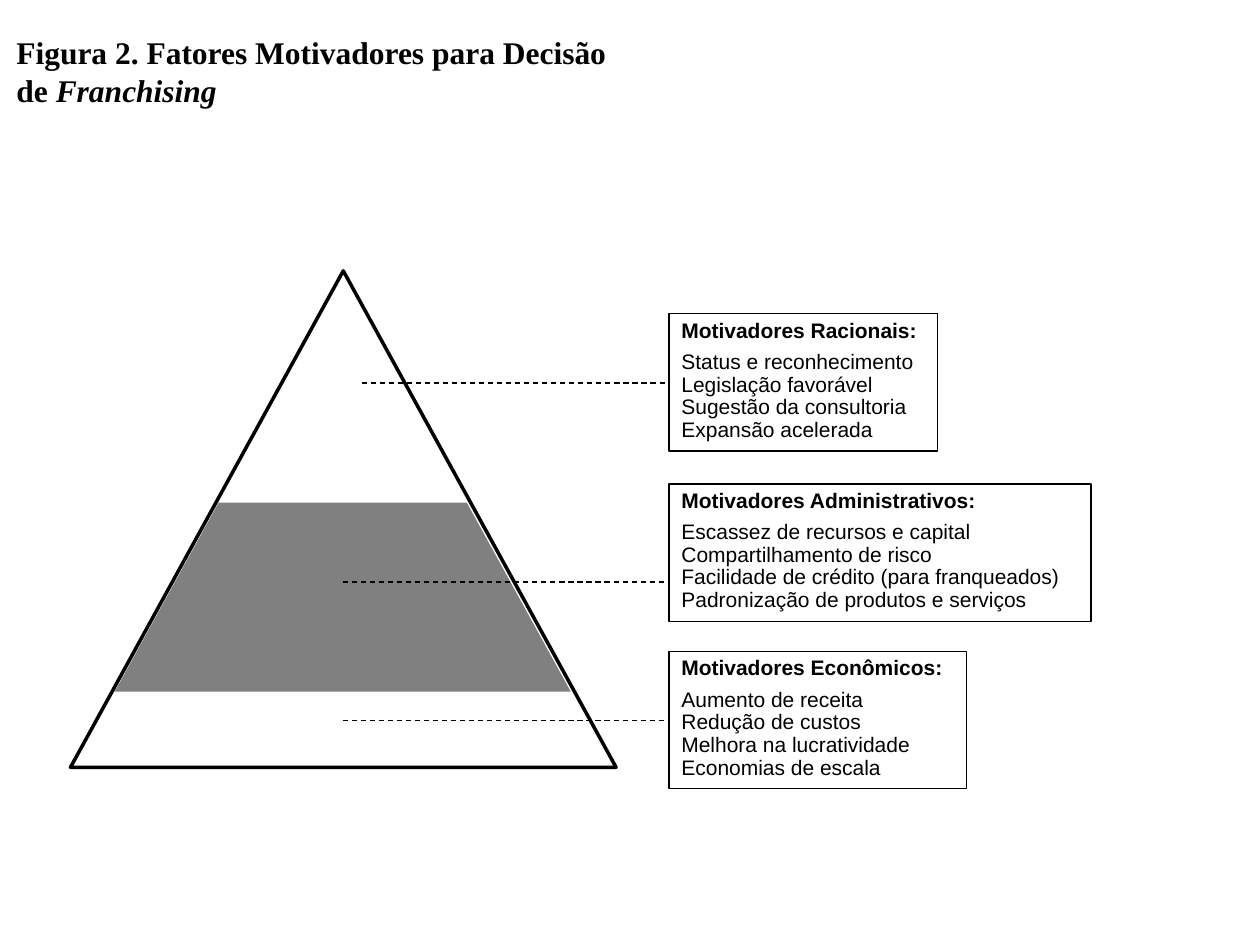
import dataclasses

import lxml.etree
import pptx
import pptx.dml.color
import pptx.enum.dml
import pptx.enum.shapes
import pptx.enum.text
import pptx.oxml.ns
import pptx.util

Inches = pptx.util.Inches
Pt = pptx.util.Pt
ShapeType = pptx.enum.shapes.MSO_SHAPE


@dataclasses.dataclass(frozen=True)
class Theme:
    ink: str = "000000"
    paper: str = "FFFFFF"
    band: str = "808080"
    title_font: str = "Times New Roman"
    body_font: str = "Arial"
    title_size: float = 18
    body_size: float = 12
    heading_gap: float = 5
    line_spacing: float = 0.9
    outline_width: float = 2
    thin_width: float = 0.75


def rgb(value):
    return pptx.dml.color.RGBColor.from_string(value)


def add_text(paragraph, text, *, font, size, color, bold=False, italic=False):
    run = paragraph.add_run()
    run.text = text
    run.font.name = font
    run.font.size = Pt(size)
    run.font.color.rgb = rgb(color)
    run.font.bold = bold
    run.font.italic = italic


class FigureBuilder:
    def __init__(self, slide, theme):
        self.slide = slide
        self.theme = theme
        self.group = slide.shapes.add_group_shape()

    def prepare_frame(self, shape):
        frame = shape.text_frame
        frame.word_wrap = True
        frame.auto_size = pptx.enum.text.MSO_AUTO_SIZE.NONE
        frame.vertical_anchor = pptx.enum.text.MSO_ANCHOR.TOP
        frame.paragraphs[0].alignment = pptx.enum.text.PP_ALIGN.LEFT
        return frame

    def title(self, parts, left, top, width, height):
        title = self.slide.shapes.title
        title.left, title.top = Inches(left), Inches(top)
        title.width, title.height = Inches(width), Inches(height)
        paragraph = self.prepare_frame(title).paragraphs[0]
        for text, italic in parts:
            add_text(paragraph, text, font=self.theme.title_font,
                     size=self.theme.title_size, color=self.theme.ink,
                     bold=True, italic=italic)

    def shape(self, kind, left, top, width, height, fill, line_width=None):
        shape = self.group.shapes.add_shape(
            kind, Inches(left), Inches(top), Inches(width), Inches(height))
        shape.shadow.inherit = False
        shape.fill.solid()
        shape.fill.fore_color.rgb = rgb(fill)
        if line_width is None:
            shape.line.fill.background()
        else:
            shape.line.color.rgb = rgb(self.theme.ink)
            shape.line.width = Pt(line_width)
        return shape

    def dashed_line(self, start, end, height):
        connector = self.group.shapes.add_connector(
            pptx.enum.shapes.MSO_CONNECTOR.STRAIGHT,
            Inches(start), Inches(height), Inches(end), Inches(height))
        connector.line.color.rgb = rgb(self.theme.ink)
        connector.line.width = Pt(self.theme.thin_width)
        connector.line.dash_style = pptx.enum.dml.MSO_LINE.DASH
        properties = connector._element.spPr
        lxml.etree.SubElement(properties, pptx.oxml.ns.qn("a:effectLst"))

    def motivator_box(self, heading, items, left, top, width, height):
        box = self.shape(ShapeType.RECTANGLE, left, top, width, height,
                         self.theme.paper, self.theme.thin_width)
        frame = self.prepare_frame(box)
        for index, text in enumerate([heading, *items]):
            is_heading = index == 0
            paragraph = frame.paragraphs[0] if is_heading else frame.add_paragraph()
            paragraph.alignment = pptx.enum.text.PP_ALIGN.LEFT
            paragraph.line_spacing = self.theme.line_spacing
            paragraph.space_after = Pt(self.theme.heading_gap if is_heading else 0)
            add_text(paragraph, text, font=self.theme.body_font,
                     size=self.theme.body_size, color=self.theme.ink,
                     bold=is_heading)


BOX_LEFT, BOX_HEIGHT = 5.31, 1.09
LEADERS = [(2.87, 6.42, 3.04), (2.72, 6.26, 4.62), (2.72, 6.26, 5.72)]
MOTIVATORS = [
    ("Motivadores Racionais:", 2.49, 2.13,
     ["Status e reconhecimento", "Legislação favorável",
      "Sugestão da consultoria", "Expansão acelerada"]),
    ("Motivadores Administrativos:", 3.84, 3.35,
     ["Escassez de recursos e capital", "Compartilhamento de risco",
      "Facilidade de crédito (para franqueados)",
      "Padronização de produtos e serviços"]),
    ("Motivadores Econômicos:", 5.17, 2.36,
     ["Aumento de receita", "Redução de custos",
      "Melhora na lucratividade", "Economias de escala"]),
]


def main():
    presentation = pptx.Presentation()
    presentation.slide_width = Inches(10)
    presentation.slide_height = Inches(7.5)
    slide = presentation.slides.add_slide(
        presentation.slide_layouts.get_by_name("Title Only"))
    theme = Theme()
    figure = FigureBuilder(slide, theme)

    figure.title([("Figura 2. Fatores Motivadores para Decisão de ", False),
                  ("Franchising", True)], 0.03, 0.21, 5, 1.01)
    figure.shape(ShapeType.ISOSCELES_TRIANGLE, 0.56, 2.15, 4.33, 3.94,
                 theme.paper, theme.outline_width)
    band = figure.shape(ShapeType.TRAPEZOID, 0.91, 3.99, 3.62, 1.5, theme.band)
    band.adjustments[0] = 0.55
    for start, end, height in LEADERS:
        figure.dashed_line(start, end, height)
    for heading, top, width, items in MOTIVATORS:
        figure.motivator_box(heading, items, BOX_LEFT, top, width, BOX_HEIGHT)

    presentation.save("out.pptx")


if __name__ == "__main__":
    main()
